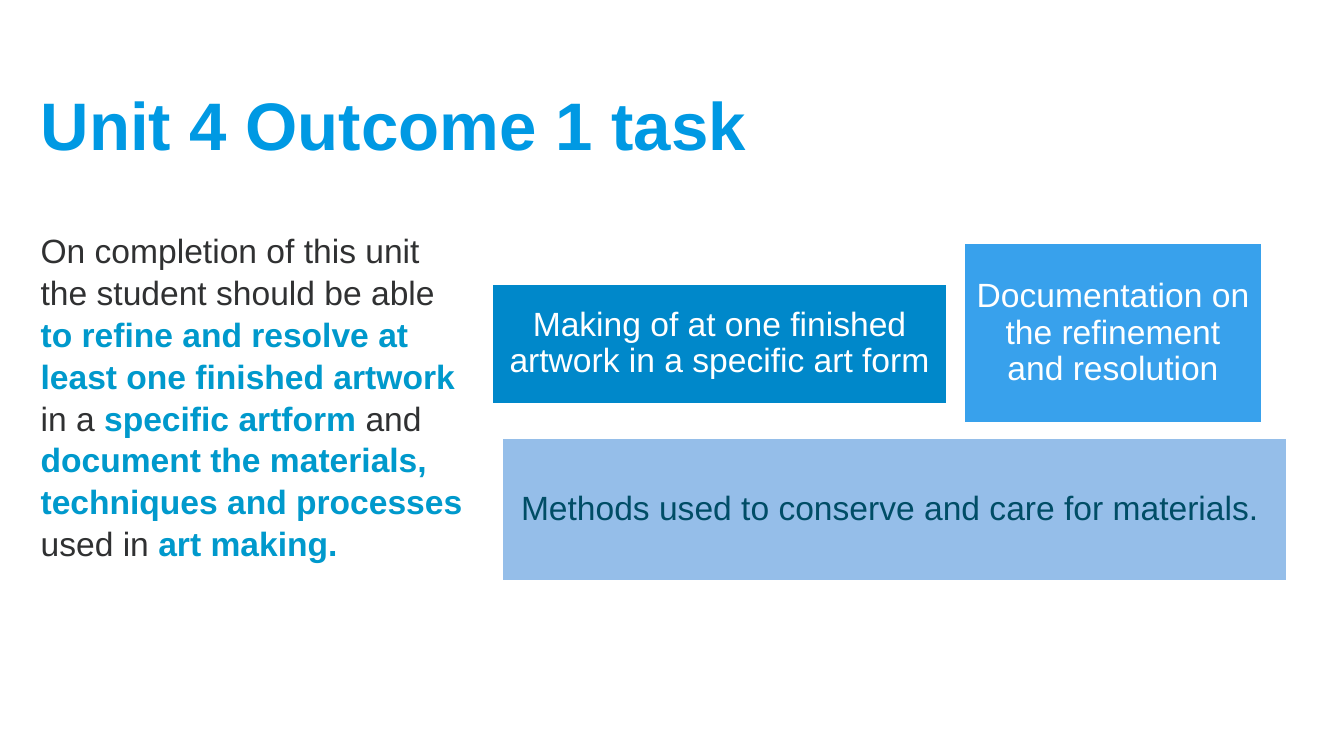
from pptx import Presentation
from pptx.dml.color import RGBColor
from pptx.enum.shapes import MSO_SHAPE as Shape
from pptx.enum.text import MSO_ANCHOR as Anchor, MSO_AUTO_SIZE as AutoSize, PP_ALIGN as Align
from pptx.util import Emu, Pt

PX = 9525  # 96 px to the inch
TITLE_ONLY = 5


def px(*lengths):
    return [Emu(length * PX) for length in lengths]


def color(hex_value):
    return RGBColor.from_string(hex_value)


class TaskSlide:
    font = "Arial"
    heading, ink, accent, white = "0099E3", "303132", "0099CC", "FFFFFF"
    title_size, text_size = 36, 18

    def __init__(self, deck):
        self.page = deck.slides.add_slide(deck.slide_layouts[TITLE_ONLY])

    def style(self, span, size, hex_value, bold=False):
        span.font.name = self.font
        span.font.size = Pt(size)
        span.font.bold = bold
        span.font.color.rgb = color(hex_value)

    def frame(self, box, sides, top, anchor):
        frame = box.text_frame
        frame.word_wrap = True
        frame.auto_size = AutoSize.NONE
        frame.vertical_anchor = anchor
        frame.margin_left, frame.margin_right = px(sides, sides)
        frame.margin_top, frame.margin_bottom = px(top, top)
        return frame

    def title(self, text, left, top, width, height):
        box = self.page.shapes.title
        box.left, box.top, box.width, box.height = px(left, top, width, height)
        frame = self.frame(box, 10, 5, Anchor.MIDDLE)
        frame.text = text
        para = frame.paragraphs[0]
        para.alignment = Align.LEFT
        para.line_spacing = 1.0
        self.style(para.runs[0], self.title_size, self.heading, bold=True)

    def body(self, parts, left, top, width, height):
        """Plain and highlighted parts take turns, starting with plain."""
        box = self.page.shapes.add_textbox(*px(left, top, width, height))
        para = self.frame(box, 10, 7, Anchor.TOP).paragraphs[0]
        para.line_spacing = 1.04
        for index, part in enumerate(parts):
            span = para.add_run()
            span.text = part
            key = index % 2 == 1
            self.style(span, self.text_size, self.accent if key else self.ink, key)

    def block(self, text, left, top, width, height, fill, text_color):
        box = self.page.shapes.add_shape(Shape.RECTANGLE, *px(left, top, width, height))
        box.shadow.inherit = False
        box.fill.solid()
        box.fill.fore_color.rgb = color(fill)
        box.line.color.rgb = color(self.white)
        box.line.width = Pt(2)
        frame = self.frame(box, 7, 7, Anchor.MIDDLE)
        frame.text = text
        para = frame.paragraphs[0]
        para.alignment = Align.CENTER
        para.line_spacing = 0.9
        self.style(para.runs[0], self.text_size, text_color)


def main():
    deck = Presentation()
    deck.slide_width, deck.slide_height = px(960, 540)
    slide = TaskSlide(deck)

    # Heading and outcome statement
    slide.title("Unit 4 Outcome 1 task", 19, 43, 915, 90)
    slide.body([
        "On completion of this unit the student should be able ",
        "to refine and resolve at least one finished artwork ",
        "in a ", "specific artform ",
        "and ", "document the materials, techniques and processes ",
        "used in ", "art making.",
    ], 19, 156, 325, 312)

    # Task blocks
    for block in (
        ("Making of at one finished artwork in a specific art form",
         351, 202, 326, 87, "0088CA", "FFFFFF"),
        ("Documentation on the refinement and resolution",
         688, 173, 214, 130, "38A1EC", "FFFFFF"),
        ("Methods used to conserve and care for materials. ",
         358, 312, 562, 104, "95BEE9", "004D66"),
    ):
        slide.block(*block)

    deck.save("out.pptx")


if __name__ == "__main__":
    main()
